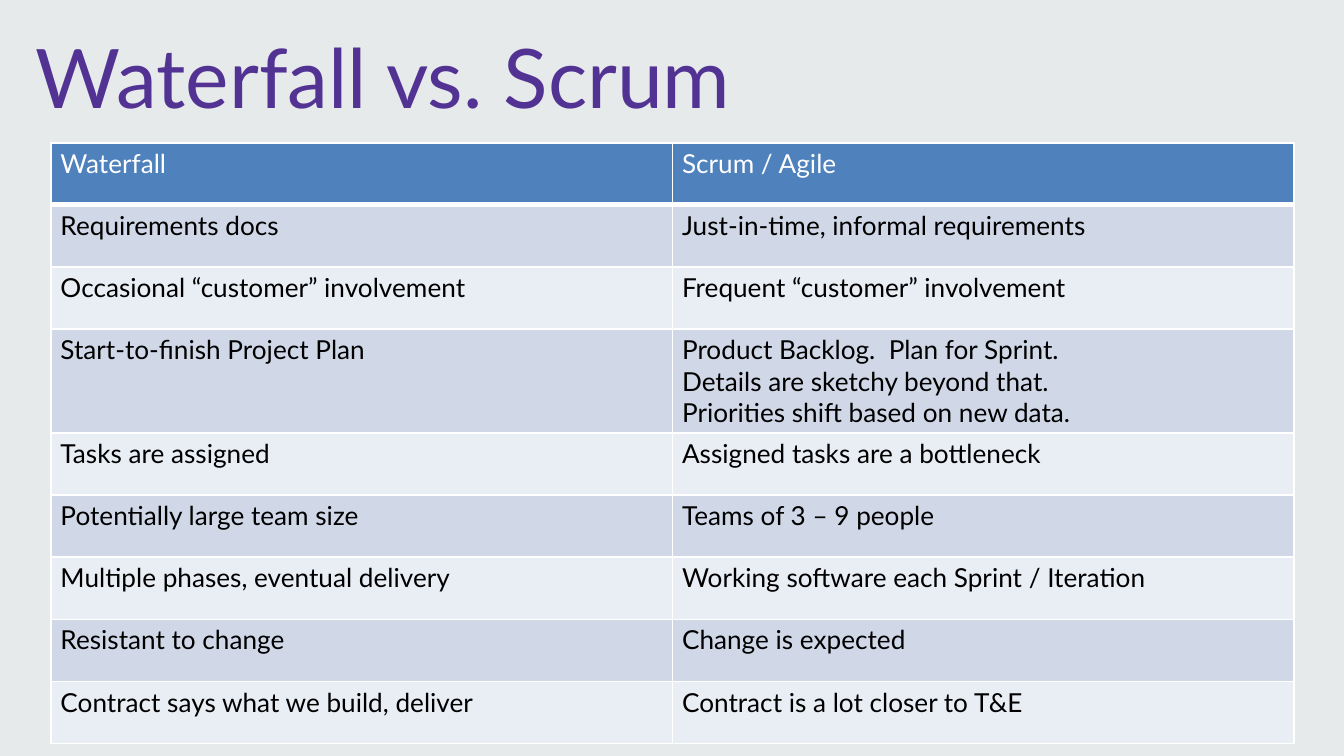
from lxml.etree import SubElement
from pptx import Presentation
from pptx.dml.color import RGBColor
from pptx.enum.text import MSO_ANCHOR, PP_ALIGN
from pptx.oxml.ns import qn
from pptx.util import Pt

TITLE = "Waterfall vs. Scrum"
ROWS = [
    ("Waterfall", "Scrum / Agile"),
    ("Requirements docs", "Just-in-time, informal requirements"),
    ("Occasional “customer” involvement", "Frequent “customer” involvement"),
    ("Start-to-finish Project Plan",
     "Product Backlog.  Plan for Sprint.\v"
     "Details are sketchy beyond that.\v"
     "Priorities shift based on new data."),
    ("Tasks are assigned", "Assigned tasks are a bottleneck"),
    ("Potentially large team size", "Teams of 3 – 9 people"),
    ("Multiple phases, eventual delivery", "Working software each Sprint / Iteration"),
    ("Resistant to change", "Change is expected"),
    ("Contract says what we build, deliver", "Contract is a lot closer to T&E"),
]
COLORS = {"background": "E7EAEB", "title": "523394", "header": "4F81BD",
          "odd": "D0D8E8", "even": "E9EDF4", "white": "FFFFFF", "black": "000000"}
FONT = "Lato"
LEFT, TOP, COL_W, ROW_H, TALL_ROW_H = 27.2, 76.5, 333, 33.3, 44


def rgb(name):
    return RGBColor.from_string(COLORS[name])


def style(p, size, color):
    p.font.name, p.font.size = FONT, Pt(size)
    p.font.color.rgb = rgb(color)


def add_borders(cell, bottom):
    tc_pr = cell._tc.get_or_add_tcPr()
    for side, width in (("L", 1), ("R", 1), ("T", 1), ("B", bottom)):
        ln = SubElement(tc_pr, qn(f"a:ln{side}"), w=str(Pt(width)))
        SubElement(SubElement(ln, qn("a:solidFill")), qn("a:srgbClr"), val=COLORS["white"])


def add_title(s):
    sp = s.shapes.title
    sp.left, sp.top, sp.width, sp.height = Pt(12), Pt(16.5), Pt(696), Pt(48)
    tf = sp.text_frame
    tf.text = TITLE
    tf.vertical_anchor = MSO_ANCHOR.MIDDLE
    p = tf.paragraphs[0]
    p.alignment = PP_ALIGN.LEFT
    style(p, 44, "title")


def add_comparison(s):
    heights = [TALL_ROW_H if "\v" in right else ROW_H for _, right in ROWS]
    table = s.shapes.add_table(len(ROWS), 2, Pt(LEFT), Pt(TOP),
                               Pt(2 * COL_W), Pt(sum(heights))).table
    for col in table.columns:
        col.width = Pt(COL_W)
    for i, (texts, height) in enumerate(zip(ROWS, heights)):
        table.rows[i].height = Pt(height)
        header = i == 0
        fill = "header" if header else "odd" if i % 2 else "even"
        for j, text in enumerate(texts):
            cell = table.cell(i, j)
            cell.margin_left = cell.margin_right = Pt(5.2)
            cell.margin_top = cell.margin_bottom = Pt(2.6)
            add_borders(cell, 3 if header else 1)
            cell.fill.solid()
            cell.fill.fore_color.rgb = rgb(fill)
            p = cell.text_frame.paragraphs[0]
            p.text = text
            p.font.bold = False
            style(p, 14, "white" if header else "black")


def main():
    """Build the Waterfall and Scrum comparison slide."""
    prs = Presentation()
    prs.slide_width, prs.slide_height = Pt(720), Pt(405)
    s = prs.slides.add_slide(prs.slide_layouts[5])
    s.background.fill.solid()
    s.background.fill.fore_color.rgb = rgb("background")
    add_title(s)
    add_comparison(s)
    prs.save("out.pptx")


if __name__ == "__main__":
    main()
